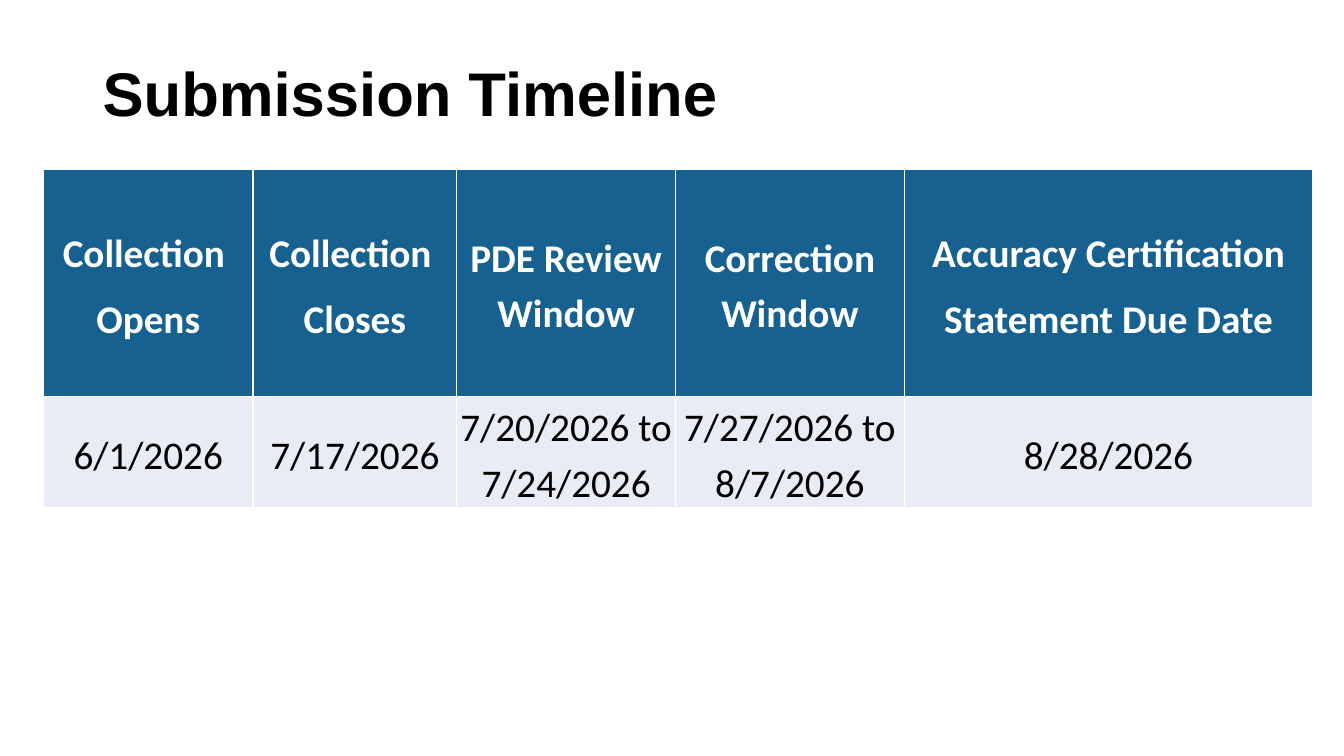
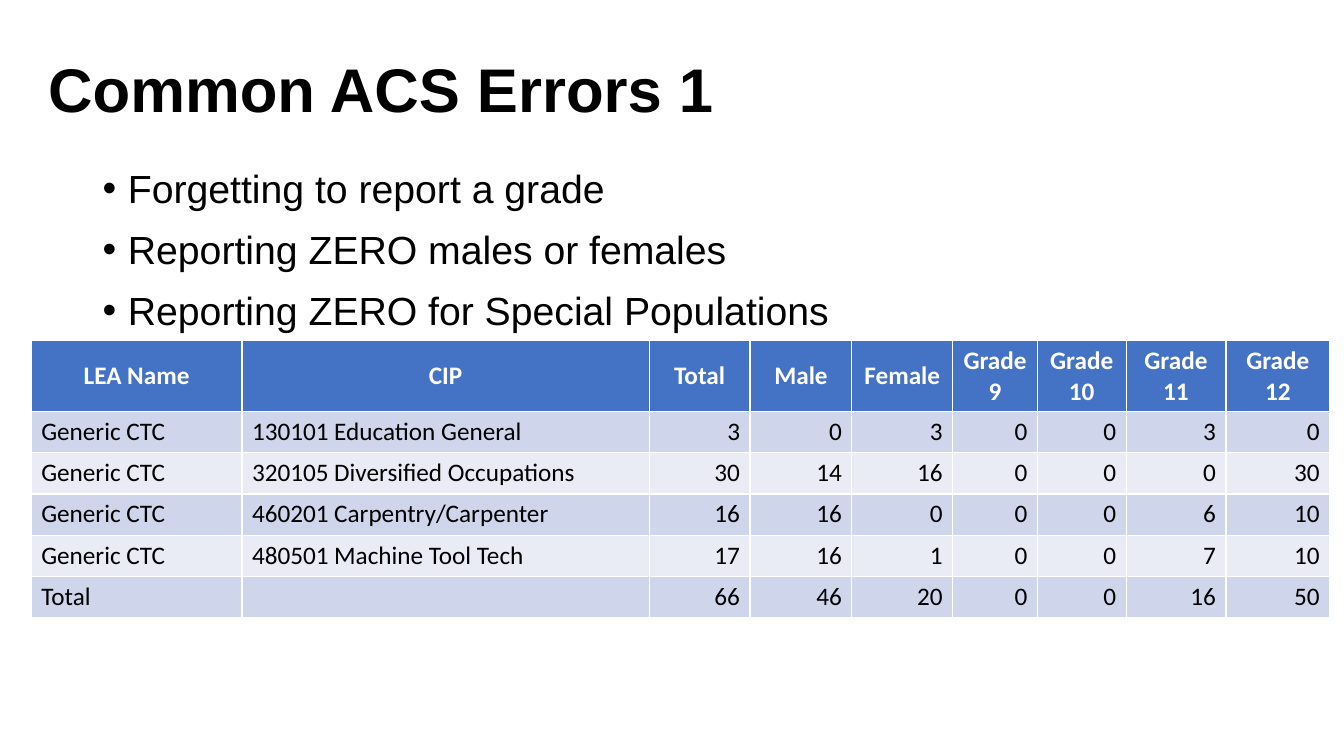
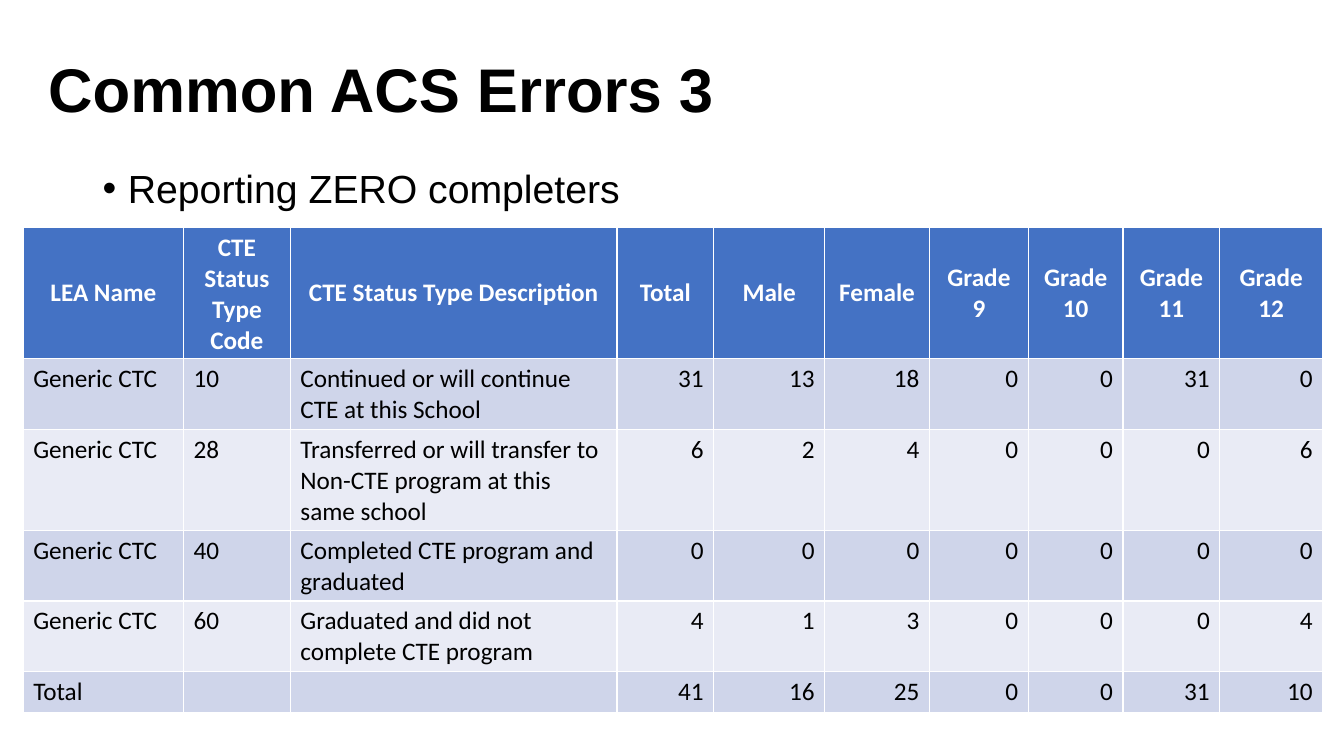
from lxml.etree import SubElement
from pptx import Presentation
from pptx.dml.color import RGBColor
from pptx.enum.text import MSO_ANCHOR as Anchor, PP_ALIGN as Align
from pptx.oxml.ns import qn
from pptx.util import Inches, Pt

TITLE_FONT, TABLE_FONT = "Arial", "Calibri"
BLACK, WHITE = "000000", "FFFFFF"
NAVY, BLUE = "16618F", "4472C4"
BANDS = ("CFD5EA", "E9EBF5")
COUNTS = ["Total", "Male", "Female", "Grade 9", "Grade 10", "Grade 11", "Grade 12"]

TIMELINE = [
    ["Collection \nOpens", "Collection \nCloses", "PDE Review Window", "Correction Window",
     "Accuracy Certification\nStatement Due Date"],
    ["6/1/2026", "7/17/2026", "7/20/2026 to 7/24/2026", "7/27/2026 to 8/7/2026", "8/28/2026"],
]

ERROR_SLIDES = [
    {
        "title": "Common ACS Errors 1",
        "bullets": ["Forgetting to report a grade", "Reporting ZERO males or females",
                    "Reporting ZERO for Special Populations"],
        "bullet_height": 5.69,
        "table_at": (0.31, 3.38),
        "widths": [2.09, 4.04, 1, 1.01, 1, 0.84, 0.88, 0.99, 1.03],
        "rows": [
            ["LEA Name", "CIP", *COUNTS],
            ["Generic CTC", "130101 Education General", 3, 0, 3, 0, 0, 3, 0],
            ["Generic CTC", "320105 Diversified Occupations", 30, 14, 16, 0, 0, 0, 30],
            ["Generic CTC", "460201 Carpentry/Carpenter", 16, 16, 0, 0, 0, 6, 10],
            ["Generic CTC", "480501 Machine Tool Tech", 17, 16, 1, 0, 0, 7, 10],
            ["Total", "", 66, 46, 20, 0, 0, 16, 50],
        ],
    },
    {
        "title": "Common ACS Errors 3",
        "bullets": ["Reporting ZERO completers"],
        "bullet_height": 0.68,
        "table_at": (0.23, 2.26),
        "widths": [1.59, 1.06, 3.24, 0.96, 1.1, 1.04, 0.98, 0.94, 0.96, 1.02],
        "rows": [
            ["LEA Name", "CTE Status Type Code", "CTE Status Type Description", *COUNTS],
            ["Generic CTC", "10", "Continued or will continue CTE at this School",
             31, 13, 18, 0, 0, 31, 0],
            ["Generic CTC", "28",
             "Transferred or will transfer to Non-CTE program at this same school",
             6, 2, 4, 0, 0, 0, 6],
            ["Generic CTC", "40", "Completed CTE program and graduated", 0, 0, 0, 0, 0, 0, 0],
            ["Generic CTC", "60", "Graduated and did not complete CTE program",
             4, 1, 3, 0, 0, 0, 4],
            ["Total", "", "", 41, 16, 25, 0, 0, 31, 10],
        ],
    },
]


def color(value):
    """Turn a hex string into a colour."""
    return RGBColor.from_string(value)


def set_font(paragraph, name, size, ink=BLACK, bold=False):
    """Set the font of a whole paragraph."""
    font = paragraph.font
    font.name, font.size, font.bold = name, Pt(size), bold
    font.color.rgb = color(ink)


def add_text_frame(slide, left, top, width, height):
    """Add a wrapping text box and return its text frame."""
    shape = slide.shapes.add_textbox(Inches(left), Inches(top), Inches(width), Inches(height))
    shape.text_frame.word_wrap = True
    return shape.text_frame


def add_title_slide(presentation, title, left, top):
    """Add a blank slide with the shared title style."""
    slide = presentation.slides.add_slide(presentation.slide_layouts[6])
    frame = add_text_frame(slide, left, top, 11.5, 1.45)
    frame.vertical_anchor = Anchor.MIDDLE
    frame.text = title
    frame.paragraphs[0].line_spacing = 0.9
    set_font(frame.paragraphs[0], TITLE_FONT, 44, bold=True)
    return slide


def add_bullets(slide, items, height):
    """Add the bulleted list below the title."""
    frame = add_text_frame(slide, 0.92, 1.58, 12.18, height)
    frame.text = "\n".join(items)
    for index, paragraph in enumerate(frame.paragraphs):
        properties = paragraph._p.get_or_add_pPr()
        properties.set("marL", str(Inches(0.25)))
        properties.set("indent", str(-Inches(0.25)))
        SubElement(properties, qn("a:buFont")).set("typeface", TITLE_FONT)
        SubElement(properties, qn("a:buChar")).set("char", "•")
        paragraph.space_before = Pt(10 if index else 0)
        set_font(paragraph, TITLE_FONT, 28)


def add_table(slide, rows, position, widths, heights, size, header_fill, bands):
    """Add a table with a filled header, banded rows and right-aligned numbers."""
    left, top = position
    table = slide.shapes.add_table(
        len(rows), len(widths), Inches(left), Inches(top),
        Inches(sum(widths)), Inches(sum(heights))).table
    for column, width in zip(table.columns, widths):
        column.width = Inches(width)
    for index, (row, values) in enumerate(zip(table.rows, rows)):
        row.height = Inches(heights[index])
        header = index == 0
        for cell, value in zip(row.cells, values):
            cell.text = str(value)
            cell.fill.solid()
            cell.fill.fore_color.rgb = color(header_fill if header else bands[(index - 1) % 2])
            cell.vertical_anchor = Anchor.MIDDLE if header else Anchor.TOP
            body_align = Align.RIGHT if isinstance(value, int) else Align.LEFT
            for paragraph in cell.text_frame.paragraphs:
                paragraph.alignment = Align.CENTER if header else body_align
                set_font(paragraph, TABLE_FONT, size, WHITE if header else BLACK, header)
    return table


def add_timeline_slide(presentation):
    """Add the slide with the submission dates."""
    slide = add_title_slide(presentation, "Submission Timeline", 0.92, 0.23)
    table = add_table(slide, TIMELINE, (0.43, 1.68), [2.08, 2.02, 2.17, 2.27, 4.05],
                      [2.25, 1.11], 28, NAVY, BANDS[::-1])
    for cell in table.iter_cells():
        cell.vertical_anchor = Anchor.MIDDLE
        cell.margin_left = cell.margin_top = cell.margin_right = Inches(0.01)
        cell.margin_bottom = 0
        for paragraph in cell.text_frame.paragraphs:
            paragraph.alignment = Align.CENTER
            paragraph.line_spacing = 1.15
            paragraph.space_after = Pt(8)


def add_error_slide(presentation, content):
    """Add a slide with bullets and an example report."""
    slide = add_title_slide(presentation, content["title"], 0.38, 0.19)
    add_bullets(slide, content["bullets"], content["bullet_height"])
    rows = content["rows"]
    add_table(slide, rows, content["table_at"], content["widths"],
              [0.41] * len(rows), 18, BLUE, BANDS)


def main():
    """Build and save the presentation."""
    presentation = Presentation()
    presentation.slide_width, presentation.slide_height = Inches(13.33), Inches(7.5)
    add_timeline_slide(presentation)
    for content in ERROR_SLIDES:
        add_error_slide(presentation, content)
    presentation.save("out.pptx")


if __name__ == "__main__":
    main()
